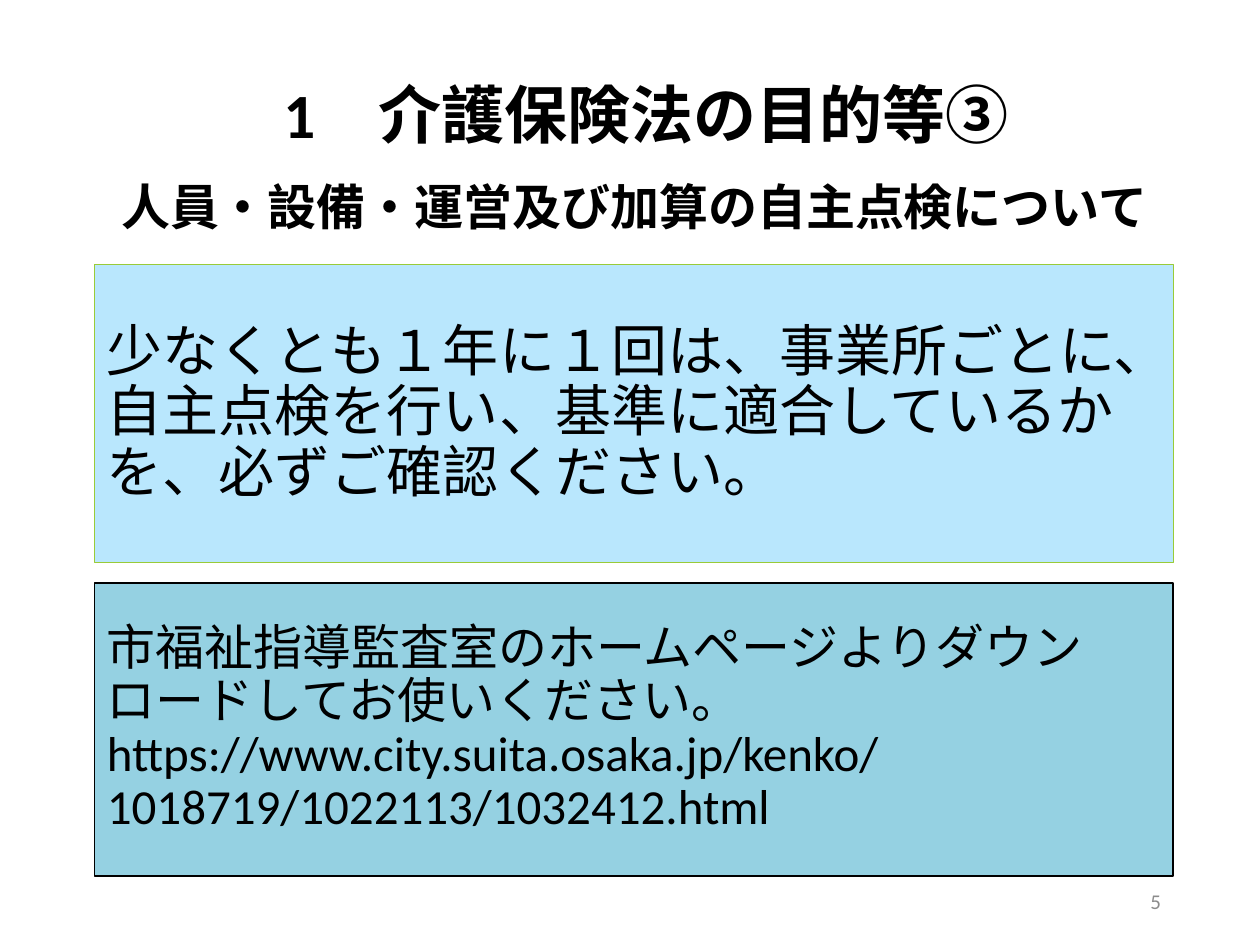
from pptx import Presentation
from pptx.dml.color import RGBColor
from pptx.enum.shapes import MSO_SHAPE
from pptx.enum.text import MSO_ANCHOR, PP_ALIGN
from pptx.util import Pt

FONT = "Calibri"
COLORS = {"text": "000000", "number": "8C8C8C", "white": "FFFFFF", "sky": "B9E7FD",
          "teal": "95D1E2", "green": "99CB38", "black": "000000"}
LEFT = 54
PANEL_WIDTH, HEAD_WIDTH = 616.5, 630

# Content, from back to front; box is left, top, width, height
PARTS = [
    # Advice panel
    dict(box=(LEFT, 151.2, PANEL_WIDTH, 170), fill="sky", line=("green", 0.5),
         size=32, spacing=0.9, before=10,
         lines=["少なくとも１年に１回は、事業所ごとに、自主点検を行い、基準に適合しているかを、必ずご確認ください。"]),
    # Page number
    dict(box=(508.5, 500.5, 162, 28.8), size=12, color="number",
         align=PP_ALIGN.RIGHT, lines=["5"]),
    # Subheading
    dict(box=(LEFT, 90, HEAD_WIDTH, 55.4), shape=MSO_SHAPE.ROUNDED_RECTANGLE,
         fill="white", size=28, bold=True,
         lines=["人員・設備・運営及び加算の自主点検について"]),
    # Download panel
    dict(box=(LEFT, 333.2, PANEL_WIDTH, 167.3), fill="teal", line=("black", 1),
         size=28, spacing=0.9,
         lines=["市福祉指導監査室のホームページよりダウンロードしてお使いください。",
                "https://www.city.suita.osaka.jp/kenko/1018719/1022113/1032412.html"]),
    # Title
    dict(box=(LEFT, 23.8, HEAD_WIDTH, 87.8), size=36, bold=True, spacing=0.9,
         align=PP_ALIGN.CENTER, lines=["1　介護保険法の目的等③"]),
]


def color(name):
    return RGBColor.from_string(COLORS[name])


def add_part(page, part):
    place = [Pt(value) for value in part["box"]]
    if "fill" in part:
        box = page.shapes.add_shape(part.get("shape", MSO_SHAPE.RECTANGLE), *place)
        box.shadow.inherit = False
        if "shape" in part:
            box.adjustments[0] = 0.5
        box.fill.solid()
        box.fill.fore_color.rgb = color(part["fill"])
        if "line" in part:
            line_color, width = part["line"]
            box.line.color.rgb = color(line_color)
            box.line.width = Pt(width)
        else:
            box.line.fill.background()
    else:
        box = page.shapes.add_textbox(*place)

    frame = box.text_frame
    frame.word_wrap = True
    frame.vertical_anchor = MSO_ANCHOR.MIDDLE
    for index, text in enumerate(part["lines"]):
        para = frame.add_paragraph() if index else frame.paragraphs[0]
        para.text = text
        para.alignment = part.get("align", PP_ALIGN.LEFT)
        para.line_spacing = part.get("spacing", 1.0)
        para.space_before = Pt(part.get("before", 0))
        para.font.name = FONT
        para.font.size = Pt(part["size"])
        para.font.bold = part.get("bold", False)
        para.font.color.rgb = color(part.get("color", "text"))


def main():
    deck = Presentation()
    deck.slide_width, deck.slide_height = Pt(720), Pt(540)
    page = deck.slides.add_slide(deck.slide_layouts[6])
    for part in PARTS:
        add_part(page, part)
    deck.save("out.pptx")


if __name__ == "__main__":
    main()
